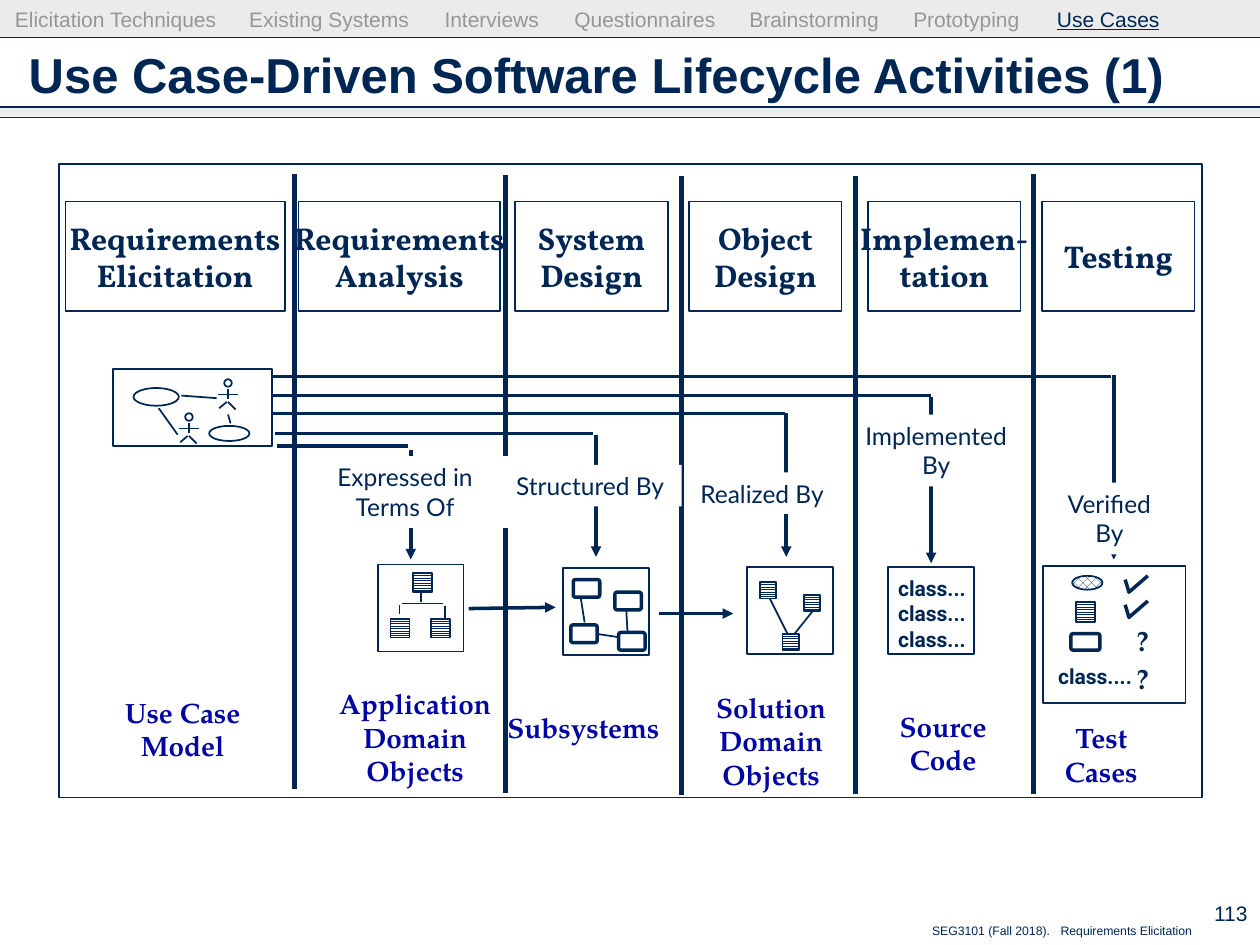
from lxml import etree
from pptx import Presentation
from pptx.dml.color import RGBColor
from pptx.enum.dml import MSO_PATTERN
from pptx.enum.shapes import MSO_CONNECTOR, MSO_SHAPE
from pptx.enum.text import MSO_ANCHOR, PP_ALIGN
from pptx.oxml.ns import qn
from pptx.util import Inches, Pt

NAVY, BLUE, GREY, BAND, WHITE = "002654", "0006A3", "969696", "CDCDCD", "FFFFFF"
RECT, ROUND, OVAL = MSO_SHAPE.RECTANGLE, MSO_SHAPE.ROUNDED_RECTANGLE, MSO_SHAPE.OVAL
STRIPES, CROSSED = MSO_PATTERN.LIGHT_HORIZONTAL, MSO_PATTERN.PERCENT_50
STRAIGHT = MSO_CONNECTOR.STRAIGHT
LEFT, CENTER, RIGHT = PP_ALIGN.LEFT, PP_ALIGN.CENTER, PP_ALIGN.RIGHT
TOP, MIDDLE = MSO_ANCHOR.TOP, MSO_ANCHOR.MIDDLE
HEADING, RESULT, LABEL, CODE = "Vollkorn", "TeX Gyre Pagella", "Lato", "Roboto"


def color(value):
    return RGBColor.from_string(value)


def add_span(para, text, font, size, tint, bold=False, underline=False):
    span = para.add_run()
    span.text = text
    span.font.name, span.font.size = font, Pt(size)
    span.font.bold, span.font.underline = bold, underline
    span.font.color.rgb = color(tint)


def add_tabs(para, stops):
    tabs = etree.SubElement(para._p.get_or_add_pPr(), qn("a:tabLst"))
    for stop in stops:
        etree.SubElement(tabs, qn("a:tab"), pos=str(Inches(stop)), algn="l")


def write(box, lines, font, size, tint=NAVY, bold=False, align=CENTER,
          anchor=TOP, wrap=True):
    """Fill a box with one paragraph for each line; return the text frame."""
    frame = box.text_frame
    frame.word_wrap, frame.vertical_anchor = wrap, anchor
    for index, line in enumerate(lines):
        para = frame.add_paragraph() if index else frame.paragraphs[0]
        para.alignment = align
        add_span(para, line, font, size, tint, bold)
    return frame


def add_text(page, at, lines, font, size, **style):
    box = page.shapes.add_textbox(*map(Inches, at))
    return write(box, lines, font, size, **style)


def add_box(page, at, kind=RECT, fill=WHITE, weight=1, pattern=None):
    """Add a preset shape; fill None leaves it open, weight 0 drops its outline."""
    box = page.shapes.add_shape(kind, *map(Inches, at))
    box.shadow.inherit = False
    if pattern:
        box.fill.patterned()
        box.fill.pattern = pattern
        box.fill.fore_color.rgb, box.fill.back_color.rgb = color(NAVY), color(WHITE)
    elif fill:
        box.fill.solid()
        box.fill.fore_color.rgb = color(fill)
    else:
        box.fill.background()
    if weight:
        box.line.color.rgb, box.line.width = color(NAVY), Pt(weight)
    else:
        box.line.fill.background()
    if kind == ROUND:
        box.adjustments[0] = 0.125
    return box


def add_line(page, ends, weight=1, arrow=False):
    line = page.shapes.add_connector(STRAIGHT, *map(Inches, ends))
    line.line.color.rgb, line.line.width = color(NAVY), Pt(weight)
    if arrow:
        etree.SubElement(line.line._get_or_add_ln(), qn("a:tailEnd"), type="triangle")
    etree.SubElement(line._element.spPr, qn("a:effectLst"))


def add_lines(page, lines, weight=1, arrow=False):
    for ends in lines:
        add_line(page, ends, weight, arrow)


def add_check(page, x, y):
    builder = page.shapes.build_freeform(Inches(x), Inches(y + 0.03))
    points = [(x + 0.03, y + 0.13), (x + 0.18, y)]
    builder.add_line_segments([(Inches(a), Inches(b)) for a, b in points], close=False)
    check = builder.convert_to_shape()
    check.shadow.inherit = False
    check.fill.background()
    check.line.color.rgb, check.line.width = color(NAVY), Pt(2)


def add_actor(page, x, y):
    """Draw a stick figure whose head is centred on x, y."""
    add_box(page, (x - 0.03, y - 0.03, 0.06, 0.06), OVAL)
    limbs = [(-0.08, 0.09, 0.08, 0.09), (0, 0.05, 0, 0.13),
             (-0.01, 0.15, -0.07, 0.2), (0, 0.15, 0.06, 0.21)]
    add_lines(page, [(x + a, y + b, x + c, y + d) for a, b, c, d in limbs])


def add_page_furniture(page):
    for top, height in [(0, 0.3), (0.85, 0.07)]:
        band = add_box(page, (0, top, 10, height), fill=BAND, weight=0)
        tint = band._element.spPr.find(qn("a:solidFill"))[0]
        etree.SubElement(tint, qn("a:alpha"), val="40000")
    add_lines(page, [(0, y, 10, y) for y in (0.3, 0.85, 0.93)], 0.75)
    footer = add_text(page, (7.3, 7.28, 2.5, 0.22),
                      ["SEG3101 (Fall 2018).\tRequirements Elicitation"],
                      "Arial", 7, align=LEFT)
    add_tabs(footer.paragraphs[0], [1.02])
    add_text(page, (9.3, 7.08, 0.7, 0.34), ["113"], "Arial", 12,
             align=RIGHT, anchor=MIDDLE, wrap=False)
    add_text(page, (0.13, 0.26, 9.74, 0.66),
             ["Use Case-Driven Software Lifecycle Activities (1)"], "Arial", 28,
             bold=True, align=LEFT, anchor=MIDDLE)
    topics = ["Elicitation Techniques", "Existing Systems", "Interviews",
              "Questionnaires", "Brainstorming", "Prototyping"]
    menu = add_text(page, (0.02, 0.05, 9.9, 0.25), ["\t".join(topics) + "\t"],
                    "Arial", 12, tint=GREY, align=LEFT)
    menu.margin_top = 0
    add_tabs(menu.paragraphs[0], [1.86, 3.41, 4.44, 5.83, 7.13, 8.27])
    add_span(menu.paragraphs[0], "Use Cases", "Arial", 12, NAVY, underline=True)


def add_use_case_model(page):
    add_box(page, (0.9, 2.93, 1.26, 0.61))
    add_box(page, (1.06, 3.08, 0.36, 0.14), OVAL)
    add_box(page, (1.66, 3.38, 0.32, 0.12), OVAL)
    add_actor(page, 1.81, 3.04)
    add_actor(page, 1.5, 3.31)
    add_lines(page, [(1.72, 3.16, 1.44, 3.14), (1.81, 3.29, 1.83, 3.36),
                     (1.41, 3.45, 1.26, 3.24)])


def add_design_models(page):
    for left, top in [(3, 4.48), (4.47, 4.51), (5.93, 4.5), (7.05, 4.5)]:
        add_box(page, (left, top, 0.68, 0.69))
    add_lines(page, [(3.19, 4.79, 3.52, 4.79), (3.53, 4.81, 3.53, 4.91),
                     (3.17, 4.8, 3.17, 4.87), (3.34, 4.71, 3.34, 4.78),
                     (4.61, 4.75, 4.64, 4.94), (4.73, 5.03, 4.93, 5.06),
                     (4.98, 5.01, 4.97, 4.83), (6.09, 4.71, 6.26, 5.05),
                     (6.25, 5.1, 6.45, 4.85)])
    for left, top, size in [(3.28, 4.55, 0.15), (3.42, 4.91, 0.15), (3.1, 4.91, 0.15),
                            (6.03, 4.62, 0.13), (6.21, 5.03, 0.13), (6.38, 4.72, 0.13)]:
        add_box(page, (left, top, size, size), pattern=STRIPES)
    for left, top in [(4.55, 4.6), (4.88, 4.7), (4.53, 4.96), (4.91, 5.02)]:
        add_box(page, (left, top, 0.21, 0.14), ROUND, weight=2)
    add_text(page, (7.03, 4.52, 0.76, 0.7), ["class..."] * 3, CODE, 12,
             bold=True, align=LEFT, wrap=False)


def add_test_cases(page):
    add_box(page, (8.28, 4.49, 1.13, 1.09), fill=None)
    add_box(page, (8.5, 5.03, 0.23, 0.13), ROUND, fill=None, weight=2)
    add_box(page, (8.51, 4.57, 0.24, 0.11), OVAL, pattern=CROSSED)
    add_box(page, (8.54, 4.78, 0.15, 0.16), pattern=STRIPES)
    add_text(page, (8.3, 5.22, 0.8, 0.3), ["class...."], CODE, 12,
             bold=True, align=LEFT, wrap=False)
    for top in (4.57, 4.77):
        add_check(page, 8.93, top)
    for top in (4.9, 5.2):
        add_text(page, (8.92, top, 0.4, 0.37), ["?"], RESULT, 16, bold=True, align=LEFT)


def add_flows(page):
    add_lines(page, [(2.2, 3.54, 3.24, 3.54), (2.18, 3.44, 4.71, 3.44),
                     (2.17, 3.28, 6.23, 3.28), (2.17, 3.14, 7.39, 3.14),
                     (2.16, 2.99, 8.82, 2.99)], 2)
    add_lines(page, [(3.26, 3.57, 3.26, 4.44), (4.73, 3.45, 4.73, 4.42),
                     (6.24, 3.28, 6.24, 4.42), (7.39, 3.15, 7.39, 4.47),
                     (8.84, 2.98, 8.84, 4.44), (3.72, 4.83, 4.41, 4.82),
                     (5.23, 4.87, 5.82, 4.87)], 2, arrow=True)
    labels = [((2.36, 3.62, 1.71, 0.57), ["Expressed in Terms Of"], CENTER, True),
              ((3.96, 3.69, 1.45, 0.33), ["Structured By"], CENTER, True),
              ((6.71, 3.29, 1.44, 0.57), ["Implemented", "By"], CENTER, True),
              ((5.46, 3.75, 1.7, 0.33), ["Realized By"], LEFT, True),
              ((8.35, 3.83, 0.91, 0.57), ["Verified", "By"], CENTER, False)]
    for at, lines, align, wrap in labels:
        write(add_box(page, at, weight=0), lines, LABEL, 14, align=align, wrap=wrap)


def add_headings_and_results(page):
    headings = [(0.52, 1.74, ["Requirements", "Elicitation"]),
                (2.37, 1.6, ["Requirements", "Analysis"]),
                (4.09, 1.21, ["System", "Design"]), (5.47, 1.21, ["Object", "Design"]),
                (6.89, 1.21, ["Implemen-", "tation"]), (8.27, 1.21, ["Testing"])]
    for left, width, lines in headings:
        write(add_box(page, (left, 1.6, width, 0.87)), lines, HEADING, 18,
              bold=True, anchor=MIDDLE, wrap=False)
    results = [((0.68, 5.47, 1.54, 0.64), ["Use Case", "Model"]),
               ((2.56, 5.4, 1.47, 0.9), ["Application", "Domain", "Objects"]),
               ((3.64, 5.59, 1.98, 0.37), ["Subsystems"]),
               ((5.35, 5.43, 1.54, 0.9), ["Solution Domain", "Objects"]),
               ((7.04, 5.58, 0.89, 0.64), ["Source", "Code"]),
               ((8.35, 5.67, 0.78, 0.64), ["Test", "Cases"])]
    for at, lines in results:
        add_text(page, at, lines, RESULT, 16, tint=BLUE, bold=True, wrap=at[2] > 1)


def main():
    deck = Presentation()
    deck.slide_width, deck.slide_height = Inches(10), Inches(7.5)
    page = deck.slides.add_slide(deck.slide_layouts[6])
    add_page_furniture(page)
    add_box(page, (0.47, 1.3, 9.07, 5.03))
    add_lines(page, [(4.01, 1.39, 4.01, 6.29), (5.41, 1.4, 5.41, 6.31),
                     (8.2, 1.38, 8.2, 6.3)], 3)
    add_design_models(page)
    add_flows(page)
    add_test_cases(page)
    add_lines(page, [(2.34, 1.38, 2.34, 6.26), (6.79, 1.4, 6.79, 6.3)], 3)
    add_use_case_model(page)
    add_headings_and_results(page)
    deck.save("out.pptx")


if __name__ == "__main__":
    main()
